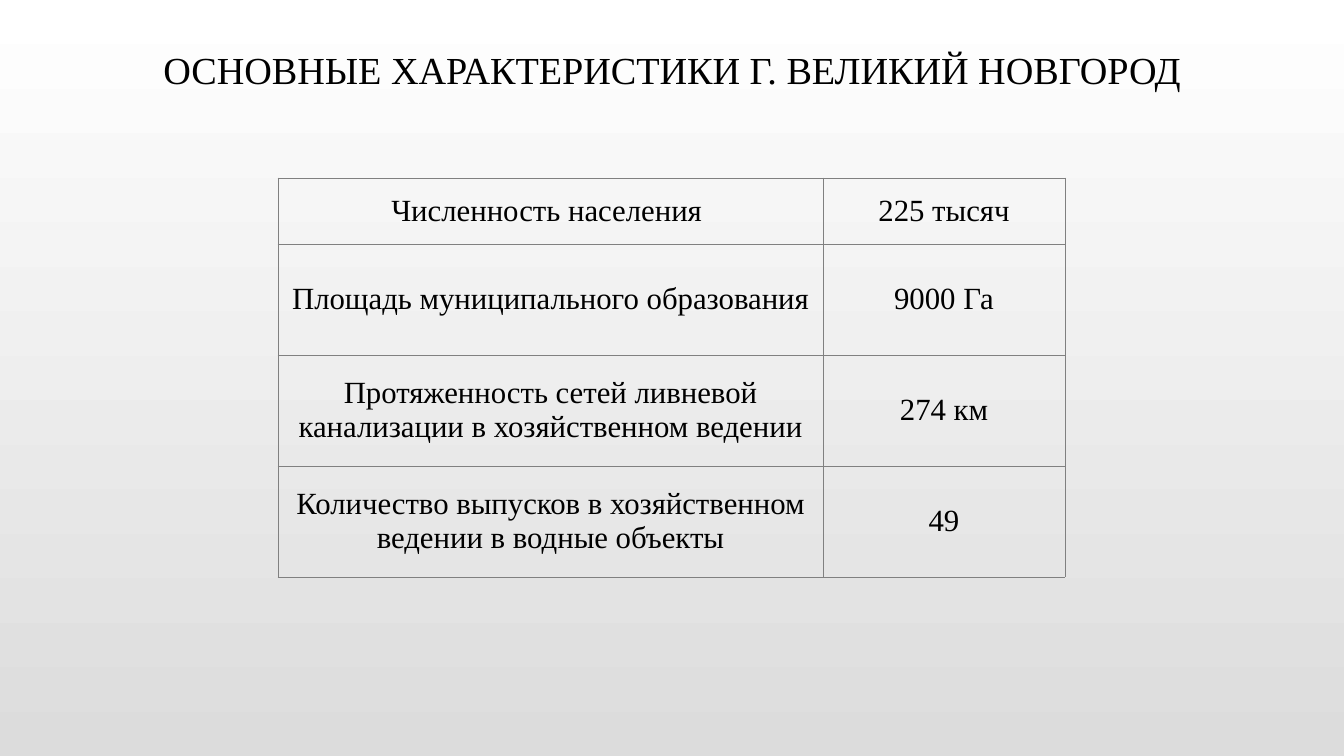
import pptx
import pptx.dml.color
import pptx.enum.text
import pptx.oxml
import pptx.oxml.ns
import pptx.util

PIXEL = 12192000 / 1344
COLORS = {"text": "000000", "border": "808080", "top": "FFFFFF", "bottom": "DCDCDC"}
FONT = "Times New Roman"
TITLE = "ОСНОВНЫЕ ХАРАКТЕРИСТИКИ Г. ВЕЛИКИЙ НОВГОРОД"
CHARACTERISTICS = [
    ("Численность населения ", "225 тысяч"),
    ("Площадь муниципального образования ", "9000 Га"),
    ("Протяженность сетей ливневой канализации в хозяйственном ведении", "274 км"),
    ("Количество выпусков в хозяйственном ведении в водные объекты", "49"),
]


def px(value):
    return pptx.util.Emu(round(value * PIXEL))


def rgb(name):
    return pptx.dml.color.RGBColor.from_string(COLORS[name])


def write_text(text_frame, text, size, color="text", line_spacing=1.0):
    paragraph = text_frame.paragraphs[0]
    paragraph.alignment = pptx.enum.text.PP_ALIGN.CENTER
    paragraph.line_spacing = line_spacing
    run = paragraph.add_run()
    run.text = text
    run.font.name = FONT
    run.font.size = pptx.util.Pt(size)
    run.font.color.rgb = rgb(color)


class SlideBuilder:
    def __init__(self, presentation):
        self.slide = presentation.slides.add_slide(presentation.slide_layouts[5])

    def background(self):
        fill = self.slide.background.fill
        fill.gradient()
        fill.gradient_angle = 270
        for stop, name in zip(fill.gradient_stops, ("top", "bottom")):
            stop.color.rgb = rgb(name)

    def title(self, text, left, top, width, height):
        shape = self.slide.shapes.title
        shape.left, shape.top = px(left), px(top)
        shape.width, shape.height = px(width), px(height)
        text_frame = shape.text_frame
        text_frame.word_wrap = True
        text_frame.auto_size = pptx.enum.text.MSO_AUTO_SIZE.NONE
        text_frame.vertical_anchor = pptx.enum.text.MSO_ANCHOR.MIDDLE
        write_text(text_frame, text, size=27.3, line_spacing=0.9)

    def table(self, rows, left, top, widths, heights):
        frame = self.slide.shapes.add_table(
            len(rows), len(widths), px(left), px(top), px(sum(widths)), px(sum(heights)))
        table = frame.table
        table.first_row = table.horz_banding = False
        for column, width in zip(table.columns, widths):
            column.width = px(width)
        for row, height, texts in zip(table.rows, heights, rows):
            row.height = px(height)
            for cell, text in zip(row.cells, texts):
                self.format_cell(cell)
                write_text(cell.text_frame, text, size=22)

    def format_cell(self, cell):
        cell.fill.background()
        cell.vertical_anchor = pptx.enum.text.MSO_ANCHOR.MIDDLE
        cell.margin_left = cell.margin_right = px(12)
        cell.margin_top = cell.margin_bottom = px(6)
        properties = cell._tc.get_or_add_tcPr()
        for index, side in enumerate(("lnL", "lnR", "lnT", "lnB")):
            border = pptx.oxml.parse_xml(
                f'<a:{side} {pptx.oxml.ns.nsdecls("a")} w="{pptx.util.Pt(0.5)}">'
                f'<a:solidFill><a:srgbClr val="{COLORS["border"]}"/></a:solidFill>'
                f'</a:{side}>')
            properties.insert(index, border)


def main():
    presentation = pptx.Presentation()
    presentation.slide_width = px(1344)
    presentation.slide_height = px(756)
    builder = SlideBuilder(presentation)
    builder.background()
    builder.title(TITLE, left=48, top=30, width=1248, height=85)
    builder.table(CHARACTERISTICS, left=278, top=178,
                  widths=[545, 242], heights=[66, 111, 111, 111])
    presentation.save("out.pptx")


if __name__ == "__main__":
    main()
